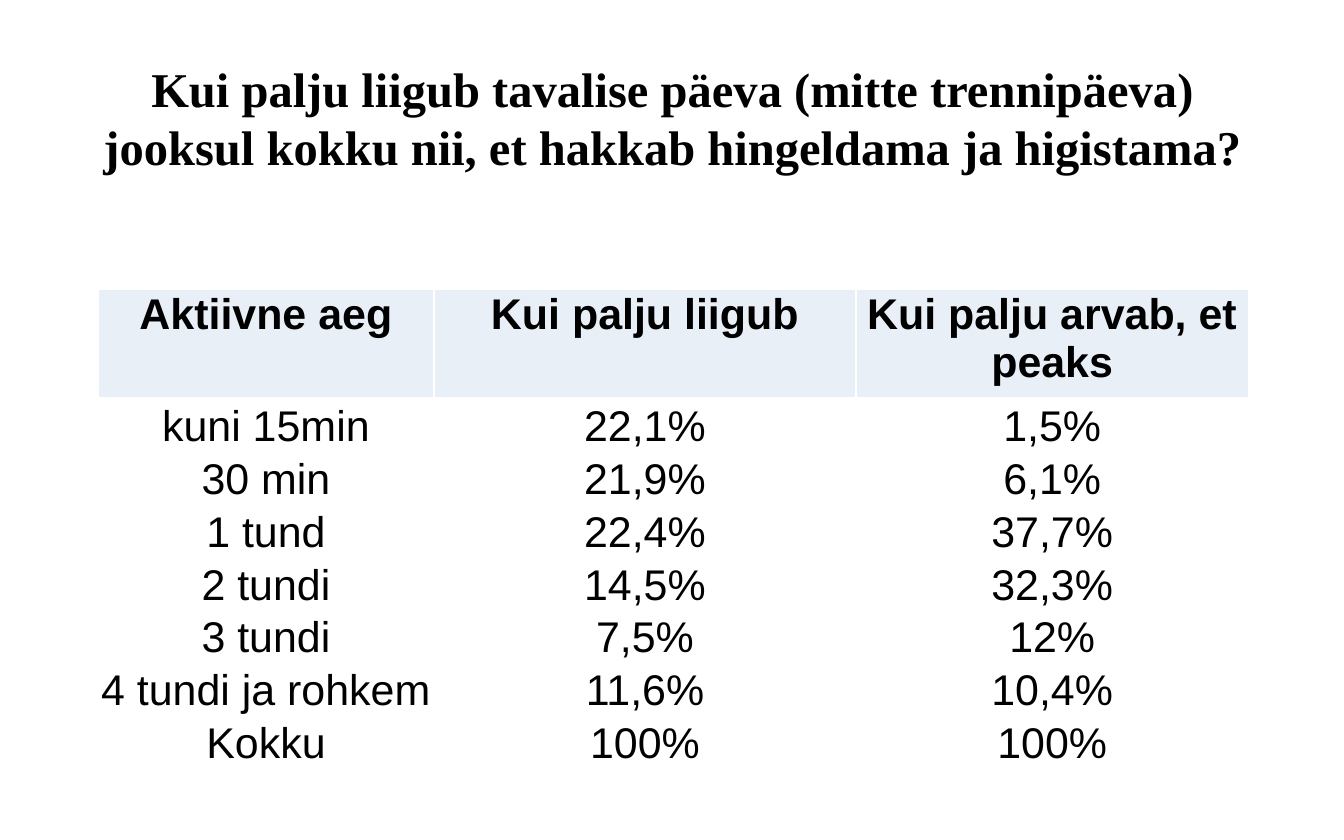
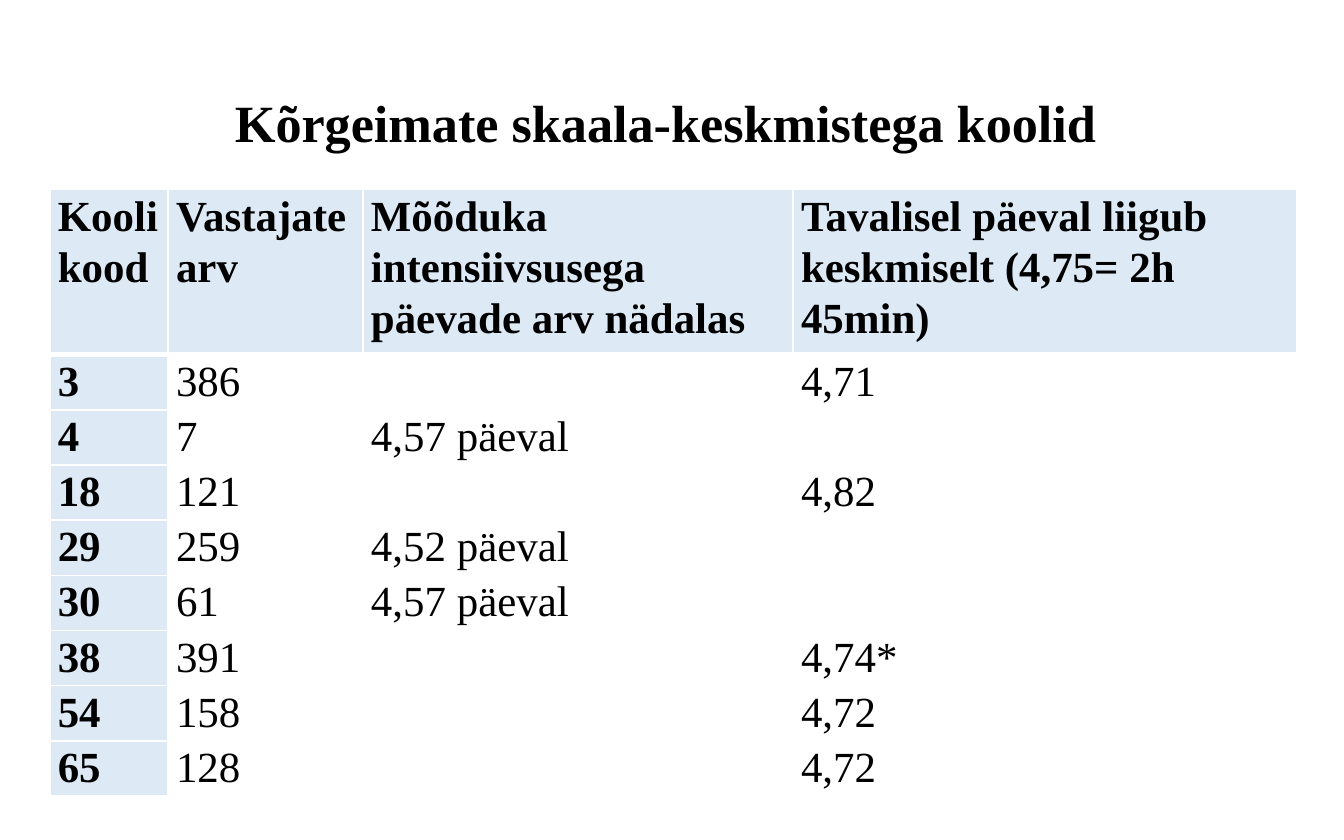
from dataclasses import dataclass

import lxml.etree
import pptx
import pptx.dml.color
import pptx.enum.text
import pptx.oxml.ns
import pptx.util
from pptx.util import Inches

ALIGN = pptx.enum.text.PP_ALIGN
ANCHOR = pptx.enum.text.MSO_ANCHOR
SERIF, SANS = "Times New Roman", "Arial"
BLACK, WHITE = "000000", "FFFFFF"
TABLE_TEXT_SIZE = 23


@dataclass
class Title:
    text: str
    left: float
    top: float
    width: float
    height: float
    size: int
    anchor: ANCHOR = ANCHOR.TOP
    line_spacing: float = 1.0


@dataclass
class TableStyle:
    font: str
    accent: str
    align: ALIGN
    body_anchor: ANCHOR
    line_spacing: float
    margins: tuple[float, float, float, float]  # left, top, right, bottom
    header_rule: float
    accent_first_column: bool


@dataclass
class DataTable:
    left: float
    top: float
    columns: list[float]
    header_height: float
    row_height: float
    rows: list[tuple[str, ...]]
    style: TableStyle


ACTIVITY_TITLE = Title(
    "Kui palju liigub tavalise päeva (mitte trennipäeva) "
    "jooksul kokku nii, et hakkab hingeldama ja higistama?",
    0.6, 0.4, 8.82, 1.04, size=26)
ACTIVITY_TABLE = DataTable(
    0.73, 2.15, [2.5, 3.14, 2.92], 0.81, 0.34,
    [
        ("Aktiivne aeg", "Kui palju liigub", "Kui palju arvab, et peaks"),
        ("kuni 15min", "22,1%", "1,5%"),
        ("30 min", "21,9%", "6,1%"),
        ("1 tund", "22,4%", "37,7%"),
        ("2 tundi", "14,5%", "32,3%"),
        ("3 tundi", "7,5%", "12%"),
        ("4 tundi ja rohkem", "11,6%", "10,4%"),
        ("Kokku", "100%", "100%"),
    ],
    TableStyle(SANS, "E9EFF7", ALIGN.CENTER, ANCHOR.BOTTOM, 1.0,
               (0.01, 0.01, 0.01, 0), header_rule=1, accent_first_column=False))

SCHOOLS_TITLE = Title(
    "Kõrgeimate skaala-keskmistega koolid ",
    0.69, 0.33, 8.62, 1.21, size=28, anchor=ANCHOR.MIDDLE, line_spacing=0.9)
SCHOOLS_TABLE = DataTable(
    0.37, 1.41, [0.88, 1.45, 3.2, 3.75], 0.52, 0.26,
    [
        ("Kooli\nkood", "Vastajate\narv",
         "Mõõduka intensiivsusega päevade arv nädalas",
         "Tavalisel päeval liigub keskmiselt (4,75= 2h 45min)"),
        ("3", "386", "", "4,71"),
        ("4", "7", "4,57 päeval", ""),
        ("18", "121", "", "4,82"),
        ("29", "259", "4,52 päeval", ""),
        ("30", "61", "4,57 päeval", ""),
        ("38", "391", "", "4,74*"),
        ("54", "158", "", "4,72"),
        ("65", "128", "", "4,72"),
    ],
    TableStyle(SERIF, "DDEAF6", ALIGN.LEFT, ANCHOR.TOP, 1.07,
               (0.06, 0, 0.06, 0), header_rule=3, accent_first_column=True))


def color(value: str) -> pptx.dml.color.RGBColor:
    return pptx.dml.color.RGBColor.from_string(value)


def write_text(frame, text: str, *, font: str, size: float, bold: bool = False,
               align: ALIGN = ALIGN.LEFT, line_spacing: float = 1.0) -> None:
    """Fill a text frame, one paragraph per line of text."""
    frame.word_wrap = True
    for index, line in enumerate(text.splitlines()):
        paragraph = frame.add_paragraph() if index else frame.paragraphs[0]
        paragraph.alignment = align
        paragraph.line_spacing = line_spacing
        run = paragraph.add_run()
        run.text = line
        run.font.name = font
        run.font.size = pptx.util.Pt(size)
        run.font.bold = bold
        run.font.color.rgb = color(BLACK)


def set_margins(target, margins: tuple[float, float, float, float]) -> None:
    (target.margin_left, target.margin_top,
     target.margin_right, target.margin_bottom) = map(Inches, margins)


def set_borders(cell, top: float, bottom: float) -> None:
    """Draw white cell borders; the side borders are one point wide."""
    name = pptx.oxml.ns.qn
    properties = cell._tc.get_or_add_tcPr()
    widths = {"a:lnL": 1, "a:lnR": 1, "a:lnT": top, "a:lnB": bottom}
    for index, (side, width) in enumerate(widths.items()):
        line = lxml.etree.Element(name(side), w=str(pptx.util.Pt(width)))
        fill = lxml.etree.SubElement(line, name("a:solidFill"))
        lxml.etree.SubElement(fill, name("a:srgbClr"), val=WHITE)
        properties.insert(index, line)


def add_title(slide, title: Title) -> None:
    box = slide.shapes.add_textbox(Inches(title.left), Inches(title.top),
                                   Inches(title.width), Inches(title.height))
    frame = box.text_frame
    frame.vertical_anchor = title.anchor
    set_margins(frame, (0.08, 0.04, 0.08, 0.04))
    write_text(frame, title.text, font=SERIF, size=title.size, bold=True,
               align=ALIGN.CENTER, line_spacing=title.line_spacing)


def add_data_table(slide, data: DataTable) -> None:
    style = data.style
    body_count = len(data.rows) - 1
    table = slide.shapes.add_table(
        len(data.rows), len(data.columns), Inches(data.left), Inches(data.top),
        Inches(sum(data.columns)),
        Inches(data.header_height + body_count * data.row_height)).table
    table.horz_banding = False
    for column, width in zip(table.columns, data.columns):
        column.width = Inches(width)
    for row_index, values in enumerate(data.rows):
        is_header = row_index == 0
        height = data.header_height if is_header else data.row_height
        table.rows[row_index].height = Inches(height)
        for column_index, value in enumerate(values):
            cell = table.cell(row_index, column_index)
            accented = is_header or (style.accent_first_column and column_index == 0)
            cell.fill.solid()
            cell.fill.fore_color.rgb = color(style.accent if accented else WHITE)
            cell.vertical_anchor = ANCHOR.TOP if is_header else style.body_anchor
            set_margins(cell, style.margins)
            set_borders(cell, top=style.header_rule if row_index == 1 else 1,
                        bottom=style.header_rule if is_header else 1)
            write_text(cell.text_frame, value, font=style.font,
                       size=TABLE_TEXT_SIZE, bold=accented, align=style.align,
                       line_spacing=style.line_spacing)


def main() -> None:
    presentation = pptx.Presentation()
    presentation.slide_width = Inches(10)
    presentation.slide_height = Inches(6.25)
    blank_layout = presentation.slide_layouts[6]
    for title, data in ((ACTIVITY_TITLE, ACTIVITY_TABLE),
                        (SCHOOLS_TITLE, SCHOOLS_TABLE)):
        slide = presentation.slides.add_slide(blank_layout)
        add_title(slide, title)
        add_data_table(slide, data)
    presentation.save("out.pptx")


if __name__ == "__main__":
    main()
